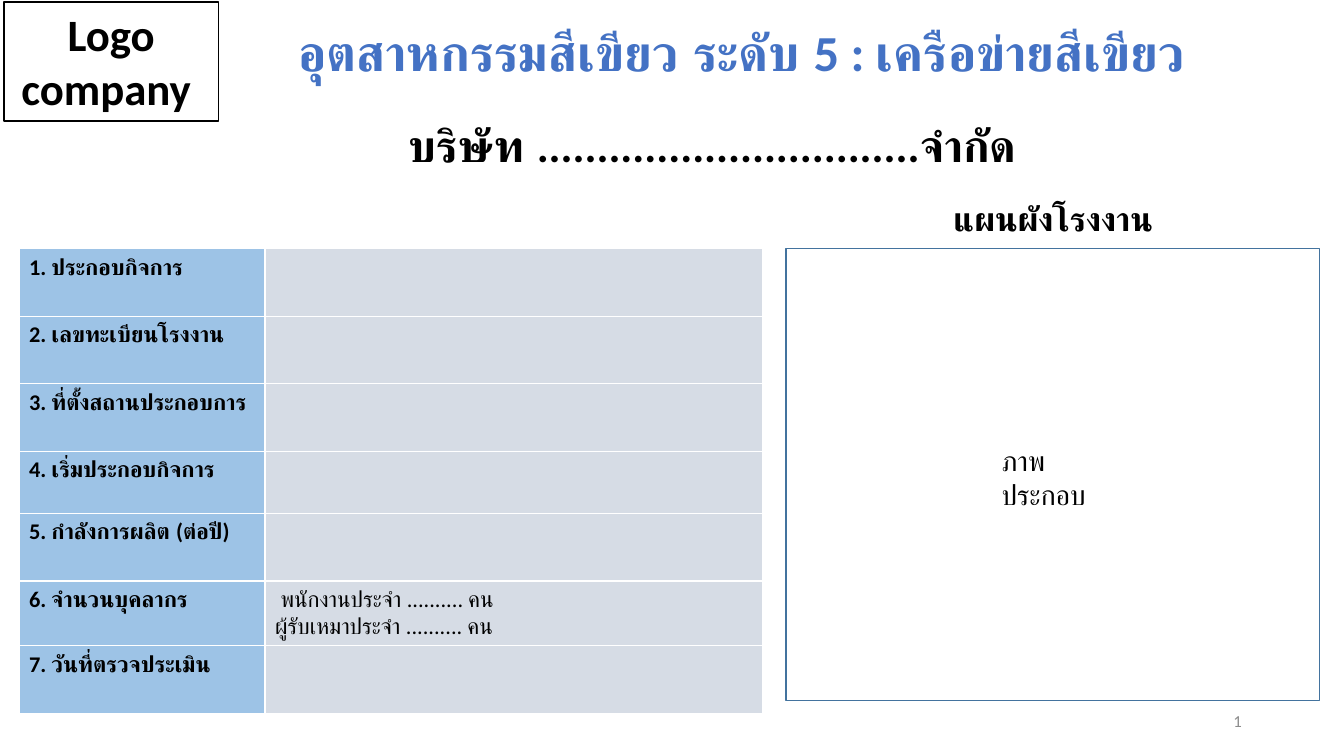
from dataclasses import dataclass

from lxml import etree
from pptx import Presentation
from pptx.dml.color import RGBColor
from pptx.enum import shapes, text
from pptx.oxml.ns import qn
from pptx.util import Cm, Pt

BLACK, WHITE, GREY, BLUE = "000000", "FFFFFF", "8C8C8C", "4472C4"
LABEL_FILL, VALUE_FILL, FRAME_LINE = "9DC3E6", "D6DCE5", "43739E"
LEFT, CENTER, RIGHT = text.PP_ALIGN.LEFT, text.PP_ALIGN.CENTER, text.PP_ALIGN.RIGHT
TOP, MIDDLE = text.MSO_ANCHOR.TOP, text.MSO_ANCHOR.MIDDLE


@dataclass
class Box:
    """A rectangle, measured in centimetres, with optional text."""
    left: float
    top: float
    width: float
    height: float
    wording: str = ""
    size: float = 32
    color: str = BLACK
    bold: bool = True
    align: text.PP_ALIGN = CENTER
    anchor: text.MSO_ANCHOR = TOP
    spacing: float = 1.0
    fill: str = ""
    line: str = ""


@dataclass
class Row:
    label: str
    height: float = 1.7
    values: tuple[str, ...] = ()


BOXES = [
    Box(8.2, 2.84, 19.51, 1.63, "บริษัท ................................จำกัด", fill=WHITE),
    Box(23.93, 17.65, 7.62, 1.02, "1", 12, GREY, False, RIGHT, MIDDLE),
    Box(0.1, 0.05, 5.41, 3, "Logo company ", fill=WHITE, line=BLACK),
    Box(19.81, 6.27, 13.44, 11.38, line=FRAME_LINE),
    Box(22.63, 4.47, 7.82, 2.18, "แผนผังโรงงาน", 24, anchor=MIDDLE, spacing=0.9),
    Box(5.74, 0.3, 26.26, 2.18, "อุตสาหกรรมสีเขียว ระดับ 5 : เครือข่ายสีเขียว ", 36, BLUE,
        anchor=MIDDLE, spacing=0.9),
    Box(24.99, 11.05, 3.07, 1.12, "ภาพประกอบ", 20, bold=False, align=LEFT),
]
COLUMN_WIDTHS = (6.2, 12.55)
ROWS = [
    Row("1. ประกอบกิจการ"),
    Row("2. เลขทะเบียนโรงงาน"),
    Row("3. ที่ตั้งสถานประกอบการ"),
    Row("4. เริ่มประกอบกิจการ", 1.57),
    Row("5. กำลังการผลิต (ต่อปี)"),
    Row("6. จำนวนบุคลากร", 1.63, (" พนักงานประจำ .......... คน", "ผู้รับเหมาประจำ .......... คน")),
    Row("7. วันที่ตรวจประเมิน"),
]


def rgb(value: str) -> RGBColor:
    return RGBColor.from_string(value)


def write(paragraph, wording: str, size: float, color: str, bold: bool) -> None:
    run = paragraph.add_run()
    run.text = wording
    for name, value in {"name": "Calibri", "size": Pt(size), "bold": bold}.items():
        setattr(run.font, name, value)
    run.font.color.rgb = rgb(color)


def add_box(slide, box: Box) -> None:
    place = [Cm(length) for length in (box.left, box.top, box.width, box.height)]
    if box.fill or box.line:
        shape = slide.shapes.add_shape(shapes.MSO_SHAPE.RECTANGLE, *place)
        shape.shadow.inherit = False
    else:
        shape = slide.shapes.add_textbox(*place)
    if box.fill:
        shape.fill.solid()
        shape.fill.fore_color.rgb = rgb(box.fill)
    else:
        shape.fill.background()
    if box.line:
        shape.line.color.rgb = rgb(box.line)
        shape.line.width = Pt(1)
    else:
        shape.line.fill.background()
    if box.wording:
        frame = shape.text_frame
        for name, value in {"word_wrap": True, "vertical_anchor": box.anchor}.items():
            setattr(frame, name, value)
        paragraph = frame.paragraphs[0]
        for name, value in {"alignment": box.align, "line_spacing": box.spacing}.items():
            setattr(paragraph, name, value)
        write(paragraph, box.wording, box.size, box.color, box.bold)


def format_cell(cell, lines: tuple[str, ...], fill: str, bold: bool) -> None:
    properties = cell._tc.get_or_add_tcPr()
    for side in ("a:lnL", "a:lnR", "a:lnT", "a:lnB"):
        border = etree.SubElement(properties, qn(side), w=str(Pt(1)))
        solid = etree.SubElement(border, qn("a:solidFill"))
        etree.SubElement(solid, qn("a:srgbClr"), val=WHITE)
    cell.fill.solid()
    cell.fill.fore_color.rgb = rgb(fill)
    frame = cell.text_frame
    for index, line in enumerate(lines):
        paragraph = frame.add_paragraph() if index else frame.paragraphs[0]
        write(paragraph, line, 16, BLACK, bold)


def add_company_table(slide) -> None:
    height = sum(row.height for row in ROWS)
    table = slide.shapes.add_table(len(ROWS), len(COLUMN_WIDTHS), Cm(0.48), Cm(6.27),
                                   Cm(sum(COLUMN_WIDTHS)), Cm(height)).table
    for column, width in zip(table.columns, COLUMN_WIDTHS):
        column.width = Cm(width)
    for table_row, row in zip(table.rows, ROWS):
        table_row.height = Cm(row.height)
        label, value = table_row.cells
        format_cell(label, (row.label,), LABEL_FILL, True)
        format_cell(value, row.values, VALUE_FILL, False)


def main() -> None:
    presentation = Presentation()
    presentation.slide_width, presentation.slide_height = Cm(33.87), Cm(19.05)
    slide = presentation.slides.add_slide(presentation.slide_layouts[6])
    for box in BOXES:
        add_box(slide, box)
    add_company_table(slide)
    presentation.save("out.pptx")


if __name__ == "__main__":
    main()
